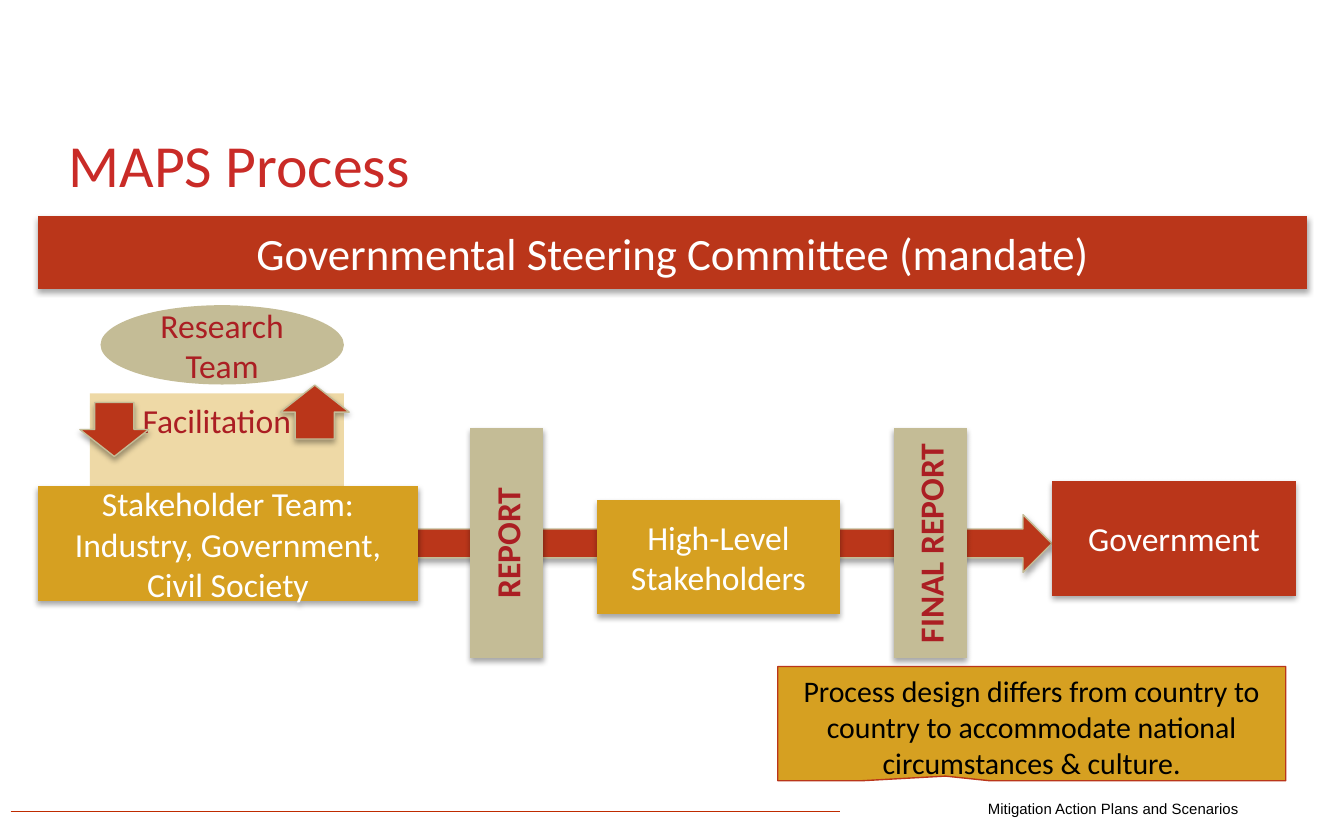
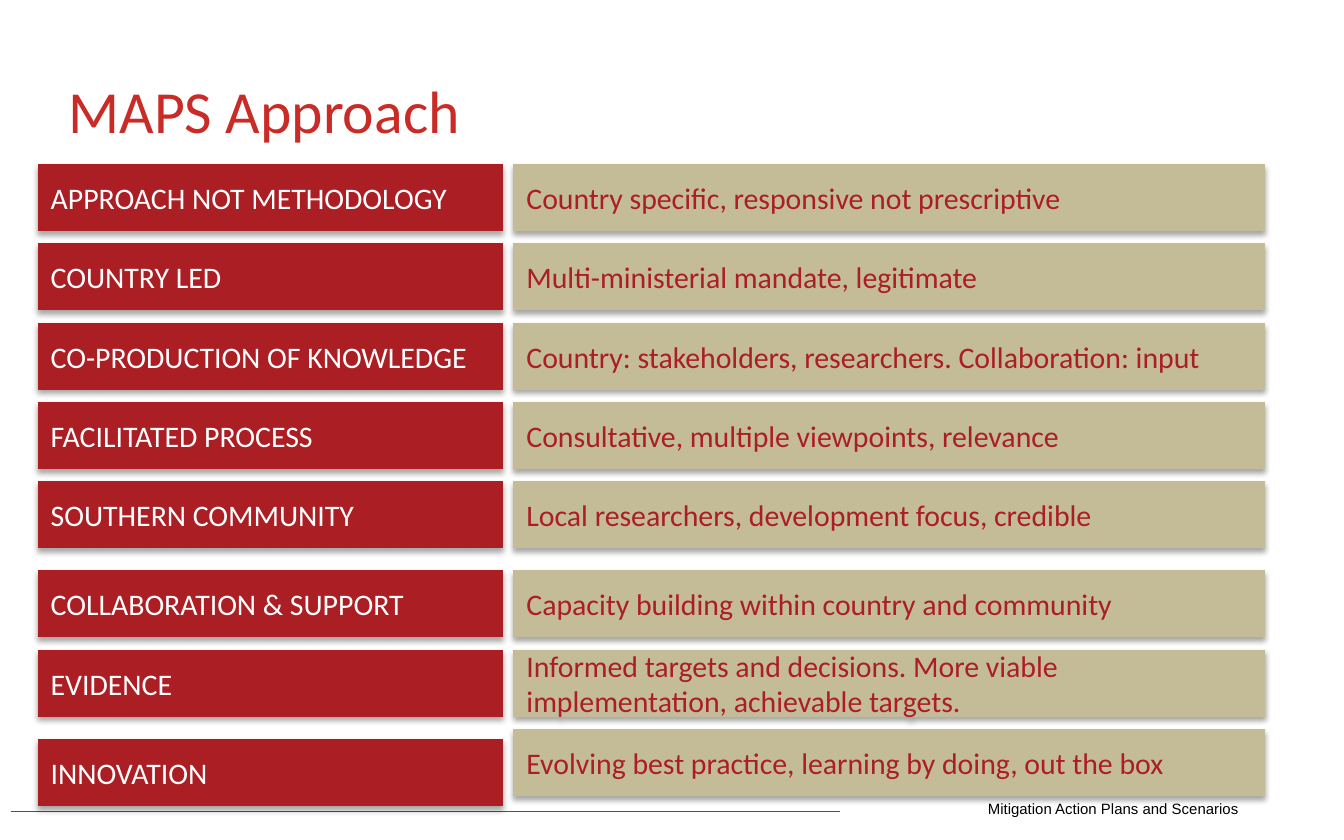
import pptx
import pptx.util
import pptx.dml.color
import pptx.enum.shapes
import pptx.enum.text
import pptx.oxml
import pptx.oxml.ns

Cm = pptx.util.Cm
Pt = pptx.util.Pt
RGB = pptx.dml.color.RGBColor.from_string
KIND = pptx.enum.shapes.MSO_SHAPE
ALIGN = pptx.enum.text.PP_ALIGN
ANCHOR = pptx.enum.text.MSO_ANCHOR
NS = pptx.oxml.ns.nsdecls("a")
HEX = {
    "title": "C92B27",
    "brick": "BA361A",
    "red": "AB1E23",
    "rule": "BF2B00",
    "gold": "D6A021",
    "sand": "C4BC96",
    "white": "FFFFFF",
    "black": "000000",
}
SHADE = (
    f'<a:effectLst {NS}><a:outerShdw blurRad="39400" dist="22900" dir="5400000" '
    'rotWithShape="0"><a:srgbClr val="000000"><a:alpha val="35000"/>'
    "</a:srgbClr></a:outerShdw></a:effectLst>"
)


def write(shape, text, size=18, hue="white", font="Calibri", bold=False,
          align=ALIGN.CENTER, anchor=ANCHOR.MIDDLE, turn=False):
    frame = shape.text_frame
    frame.word_wrap = True
    frame.auto_size = pptx.enum.text.MSO_AUTO_SIZE.NONE
    frame.vertical_anchor = anchor
    if turn:
        frame._txBody.bodyPr.set("vert", "vert270")
    para = frame.paragraphs[0]
    para.alignment = align
    run = para.add_run()
    run.text = text
    run.font.name = font
    run.font.size = Pt(size)
    run.font.bold = bold
    run.font.color.rgb = RGB(HEX[hue])


def draw(slide, kind, x, y, w, h, fill, edge=None, shade=True):
    shape = slide.shapes.add_shape(kind, Cm(x), Cm(y), Cm(w), Cm(h))
    shape.fill.solid()
    shape.fill.fore_color.rgb = RGB(HEX[fill])
    if edge:
        shape.line.color.rgb = RGB(HEX[edge])
        shape.line.width = Pt(0.75)
    else:
        shape.line.fill.background()
    shape.shadow.inherit = False
    if shade:
        props = shape._element.spPr
        props.remove(props.find(pptx.oxml.ns.qn("a:effectLst")))
        props.append(pptx.oxml.parse_xml(SHADE))
    return shape


deck = pptx.Presentation()
deck.slide_width = Cm(25.4)
deck.slide_height = Cm(15.88)

slides = []
for name, top in [("MAPS Process", 1.78), ("MAPS Approach", 0.76)]:
    slide = deck.slides.add_slide(deck.slide_layouts[5])
    slides.append(slide)
    rule = slide.shapes.add_connector(
        pptx.enum.shapes.MSO_CONNECTOR.STRAIGHT,
        Cm(0.2), Cm(15.34), Cm(15.88), Cm(15.34))
    rule.line.color.rgb = RGB(HEX["rule"])
    rule.line.width = Pt(0.75)
    rule._element.spPr.append(pptx.oxml.parse_xml(f"<a:effectLst {NS}/>"))
    foot = slide.shapes.add_textbox(Cm(18.42), Cm(14.99), Cm(6.98), Cm(0.6))
    write(foot, "Mitigation Action Plans and Scenarios", size=8, hue="black",
          font="Arial", align=ALIGN.LEFT, anchor=ANCHOR.TOP)
    title = slide.shapes.title
    title.left, title.top = Cm(1.04), Cm(top)
    title.width, title.height = Cm(21.59), Cm(2.64)
    write(title, name, size=32, hue="title", align=ALIGN.LEFT)

flow, plan = slides

help_box = draw(flow, KIND.RECTANGLE, 1.7, 7.44, 4.8, 1.8, "gold", shade=False)
tint = help_box._element.spPr.find(".//" + pptx.oxml.ns.qn("a:srgbClr"))
tint.append(pptx.oxml.parse_xml(f'<a:alpha {NS} val="40000"/>'))
write(help_box, "Facilitation", hue="red", anchor=ANCHOR.TOP)

board = draw(flow, KIND.FLOWCHART_PROCESS, 0.71, 4.09, 24, 1.37, "brick")
write(board, "Governmental Steering Committee (mandate)", size=24)

team = draw(flow, KIND.OVAL, 1.9, 5.77, 4.6, 1.5, "sand", shade=False)
write(team, "Research Team", hue="red")

draw(flow, KIND.RIGHT_ARROW, 5.38, 9.73, 14.5, 1.09, "brick", edge="sand")

steps = [
    ("Stakeholder Team: Industry, Government, Civil Society",
     0.71, 9.19, 7.2, 2.18, "gold"),
    ("REPORT", 8.89, 8.1, 1.38, 4.34, "sand"),
    ("High-Level Stakeholders", 11.28, 9.45, 4.6, 2.16, "gold"),
    ("FINAL REPORT", 16.89, 8.1, 1.38, 4.34, "sand"),
    ("Government", 19.89, 9.1, 4.6, 2.16, "brick"),
]
for text, x, y, w, h, fill in steps:
    step = draw(flow, KIND.FLOWCHART_PROCESS, x, y, w, h, fill)
    tall = h > w
    write(step, text, hue="red" if tall else "white", bold=tall, turn=tall)

for x, y, turn in [(1.65, 7.47, 90), (5.44, 7.14, 270)]:
    arrow = draw(flow, KIND.RIGHT_ARROW, x, y, 1.02, 1.3, "brick", edge="sand")
    arrow.adjustments[0] = 0.57
    arrow.rotation = turn

note = draw(flow, KIND.RECTANGULAR_CALLOUT, 14.7, 12.6, 9.6, 2.16, "gold",
            edge="brick", shade=False)
note.adjustments[0] = -0.17
note.adjustments[1] = 0.46
write(note, "Process design differs from country to country to accommodate "
      "national circumstances & culture.", size=16, hue="black",
      anchor=ANCHOR.TOP)

rows = [
    ("APPROACH NOT METHODOLOGY", "Country specific, responsive not prescriptive"),
    ("COUNTRY LED", "Multi-ministerial mandate, legitimate"),
    ("CO-PRODUCTION OF KNOWLEDGE",
     "Country: stakeholders, researchers. Collaboration: input"),
    ("FACILITATED PROCESS", "Consultative, multiple viewpoints, relevance"),
    ("SOUTHERN COMMUNITY", "Local researchers, development focus, credible"),
    ("COLLABORATION & SUPPORT", "Capacity building within country and community"),
    ("EVIDENCE", "Informed targets and decisions. More viable implementation, "
     "achievable targets."),
    ("INNOVATION", "Evolving best practice, learning by doing, out the box"),
]
for i, (head, body) in enumerate(rows):
    y = 3.1 + 1.5 * i + (0.18 if i >= 5 else 0)
    drop = 0.19 if head == "INNOVATION" else 0
    left = draw(plan, KIND.FLOWCHART_PROCESS, 0.71, y + drop, 8.8, 1.27, "red")
    write(left, head, size=16, align=ALIGN.LEFT)
    right = draw(plan, KIND.FLOWCHART_PROCESS, 9.7, y, 14.2, 1.27, "sand")
    write(right, body, size=16, hue="red", align=ALIGN.LEFT)

deck.save("out.pptx")
